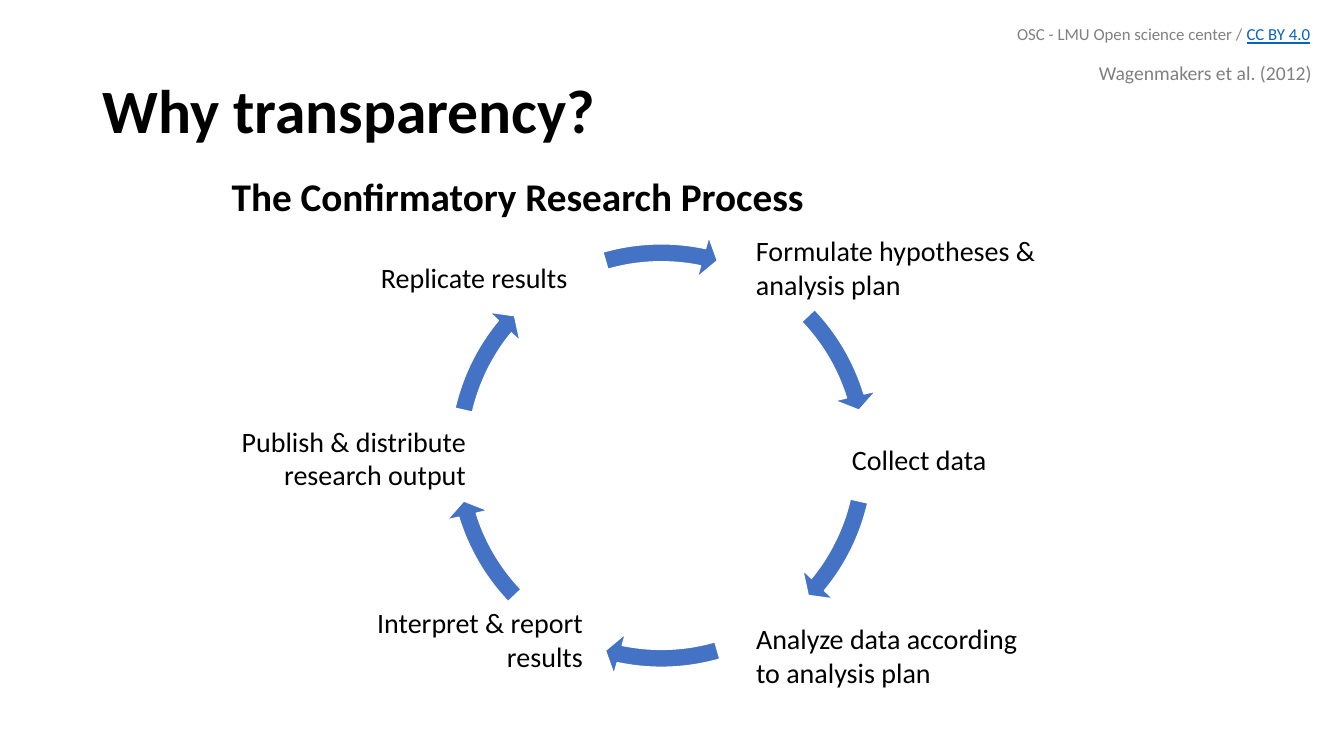
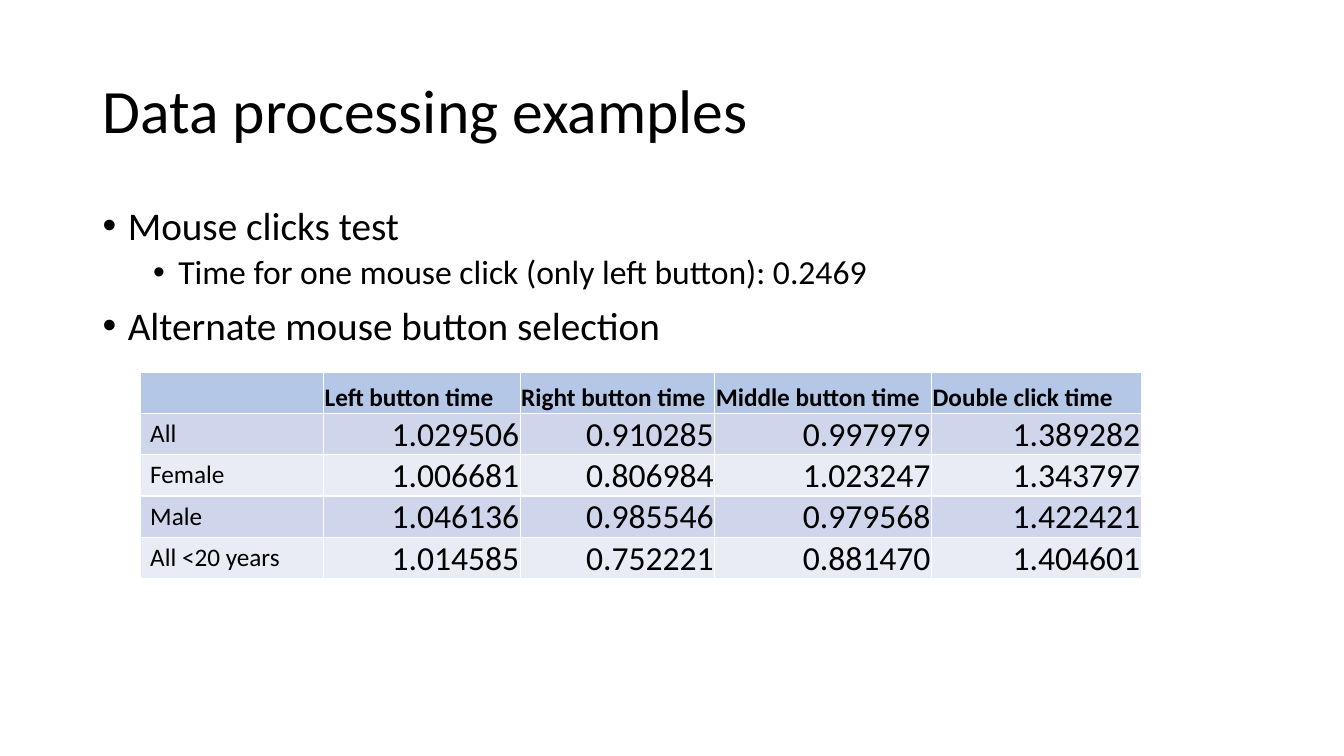
"""Build two slides: the confirmatory research cycle and a mouse timing table."""
from lxml import etree
from pptx import Presentation
from pptx.dml.color import RGBColor
from pptx.enum.shapes import MSO_SHAPE
from pptx.enum.text import MSO_ANCHOR, MSO_AUTO_SIZE, PP_ALIGN
from pptx.oxml.ns import qn
from pptx.util import Inches, Pt

BLACK, GRAY, WHITE = "000000", "808080", "FFFFFF"
BLUE, LINK_BLUE = "4472C4", "0563C1"
HEADER_FILL, BAND_FILLS = "B4C7E7", ("CFD5EA", "E9EBF5")
TITLE = {"size": Pt(44)}
HEADING = {"size": Pt(28)}
LABEL = {"size": Pt(20)}
TIGHT = {"line_spacing": 0.9}
RIGHT = {"alignment": PP_ALIGN.RIGHT}
WRAPPED = {"word_wrap": True}
TITLE_FRAME = {"word_wrap": True, "vertical_anchor": MSO_ANCHOR.MIDDLE}
FITTED = {"word_wrap": False, "auto_size": MSO_AUTO_SIZE.SHAPE_TO_FIT_TEXT}
TITLE_PLACE = (0.92, 0.4, 11.5, 1.45)


def color(code):
    """Turn a hex string into a colour."""
    return RGBColor.from_string(code)


def write(para, text, font_format, para_format, code=BLACK):
    """Add one formatted span of text to a paragraph."""
    span = para.add_run()
    span.text = text
    span.font.color.rgb = color(code)
    for target, values in ((para, para_format), (span.font, {"name": "Calibri"} | font_format)):
        for name, value in values.items():
            setattr(target, name, value)


deck = Presentation()
deck.slide_width, deck.slide_height = Inches(13.33), Inches(7.5)
cycle_page, data_page = [deck.slides.add_slide(deck.slide_layouts[6]) for _ in range(2)]

arrow_angles = [
    (205.737, 189.825), (23.674, 7.762), (61.116, 44.382),
    (97.737, 81.825), (131.674, 115.762), (169.116, 152.382),
]
for tip, tail in arrow_angles:
    arrow = cycle_page.shapes.add_shape(
        MSO_SHAPE.CIRCULAR_ARROW, Inches(4.34), Inches(2.3), Inches(4.44), Inches(4.44))
    arrow.shadow.inherit = False
    for index, value in enumerate((0.04, 2.502, tip, tail, 0.047)):
        arrow.adjustments[index] = value
    arrow.fill.solid()
    arrow.fill.fore_color.rgb = color(BLUE)
    arrow.line.color.rgb = color(WHITE)
    arrow.line.width = Pt(1)

text_boxes = [
    (cycle_page, TITLE_PLACE, ["Why transparency?"], TITLE_FRAME, TIGHT, TITLE | {"bold": True}, BLACK),
    (data_page, TITLE_PLACE, ["Data processing examples"], TITLE_FRAME, TIGHT, TITLE, BLACK),
    (cycle_page, (2.2, 1.71, 6.63, 0.6), ["The Confirmatory Research Process"],
     WRAPPED, TIGHT, HEADING | {"bold": True}, BLACK),
    (cycle_page, (7.4, 2.27, 3, 0.77), ["Formulate hypotheses &", "analysis plan"], FITTED, {}, LABEL, BLACK),
    (cycle_page, (8.35, 4.34, 1.55, 0.44), ["Collect data"], FITTED, {}, LABEL, BLACK),
    (cycle_page, (7.4, 6.12, 2.82, 0.77), ["Analyze data according", "to analysis plan"], FITTED, {}, LABEL, BLACK),
    (cycle_page, (3.62, 5.96, 2.26, 0.77), ["Interpret & report", "results"], FITTED, RIGHT, LABEL, BLACK),
    (cycle_page, (3.68, 2.54, 2.07, 0.44), ["Replicate results"], FITTED, {}, LABEL, BLACK),
    (cycle_page, (1.73, 4.16, 2.99, 0.77), ["Publish & distribute research output"], WRAPPED, RIGHT, LABEL, BLACK),
    (cycle_page, (10.8, 0.56, 2.34, 0.34), ["Wagenmakers et al. (2012)"], FITTED, {}, {"size": Pt(14)}, GRAY),
    (cycle_page, (9.99, 0.19, 3.14, 0.3), ["OSC - LMU Open science center / "], FITTED, {}, {"size": Pt(12)}, GRAY),
]
for page, place, lines, frame_format, para_format, font_format, code in text_boxes:
    frame = page.shapes.add_textbox(*map(Inches, place)).text_frame
    for name, value in frame_format.items():
        setattr(frame, name, value)
    for index, line in enumerate(lines):
        para = frame.add_paragraph() if index else frame.paragraphs[0]
        write(para, line, font_format, para_format, code)
    if line.startswith("OSC"):
        write(para, "CC BY 4.0", font_format | {"underline": True}, {}, LINK_BLUE)

bullets = [
    ("Mouse clicks test", 0, 28, 0),
    ("Time for one mouse click (only left button): 0.2469", 1, 24, 5),
    ("Alternate mouse button selection", 0, 28, 10),
]
frame = data_page.shapes.add_textbox(Inches(0.92), Inches(2), Inches(11.5), Inches(1.6)).text_frame
frame.word_wrap = True
for index, (text, level, size, gap) in enumerate(bullets):
    para = frame.add_paragraph() if index else frame.paragraphs[0]
    properties = para._p.get_or_add_pPr()
    properties.set("marL", str(Inches(0.25 + 0.5 * level)))
    properties.set("indent", str(-Inches(0.25)))
    etree.SubElement(properties, qn("a:buFont"), typeface="Arial")
    etree.SubElement(properties, qn("a:buChar"), char="•")
    write(para, text, {"size": Pt(size)}, TIGHT | {"level": level, "space_before": Pt(gap)})

rows = [
    ("", "Left button time", "Right button time", "Middle button time", "Double click time"),
    ("All", "1.029506", "0.910285", "0.997979", "1.389282"),
    ("Female", "1.006681", "0.806984", "1.023247", "1.343797"),
    ("Male", "1.046136", "0.985546", "0.979568", "1.422421"),
    ("All <20 years", "1.014585", "0.752221", "0.881470", "1.404601"),
]
column_widths = [1.82, 1.95, 1.93, 2.15, 2.08]
row_height = 0.41
value_cell = {
    "vertical_anchor": MSO_ANCHOR.BOTTOM, "margin_left": Inches(0.01),
    "margin_top": Inches(0.01), "margin_right": Inches(0.01), "margin_bottom": 0,
}
table = data_page.shapes.add_table(
    len(rows), len(column_widths), Inches(1.39), Inches(3.69),
    Inches(sum(column_widths)), Inches(row_height * len(rows))).table
for column, width in zip(table.columns, column_widths):
    column.width = Inches(width)
for row_index, row in enumerate(rows):
    table.rows[row_index].height = Inches(row_height)
    for column_index, text in enumerate(row):
        cell = table.cell(row_index, column_index)
        is_value = row_index > 0 and column_index > 0
        if column_index:
            for name, value in value_cell.items():
                setattr(cell, name, value)
        cell_properties = cell._tc.get_or_add_tcPr()
        for side in ("a:lnL", "a:lnR", "a:lnT", "a:lnB"):
            border = etree.SubElement(cell_properties, qn(side), w=str(Pt(1)))
            border_fill = etree.SubElement(border, qn("a:solidFill"))
            etree.SubElement(border_fill, qn("a:srgbClr"), val=WHITE)
        cell.fill.solid()
        cell.fill.fore_color.rgb = color(BAND_FILLS[(row_index - 1) % 2] if row_index else HEADER_FILL)
        if text:
            font_format = {"size": Pt(24 if is_value else 18), "bold": row_index == 0}
            write(cell.text_frame.paragraphs[0], text, font_format, RIGHT if is_value else {})

deck.save("out.pptx")
